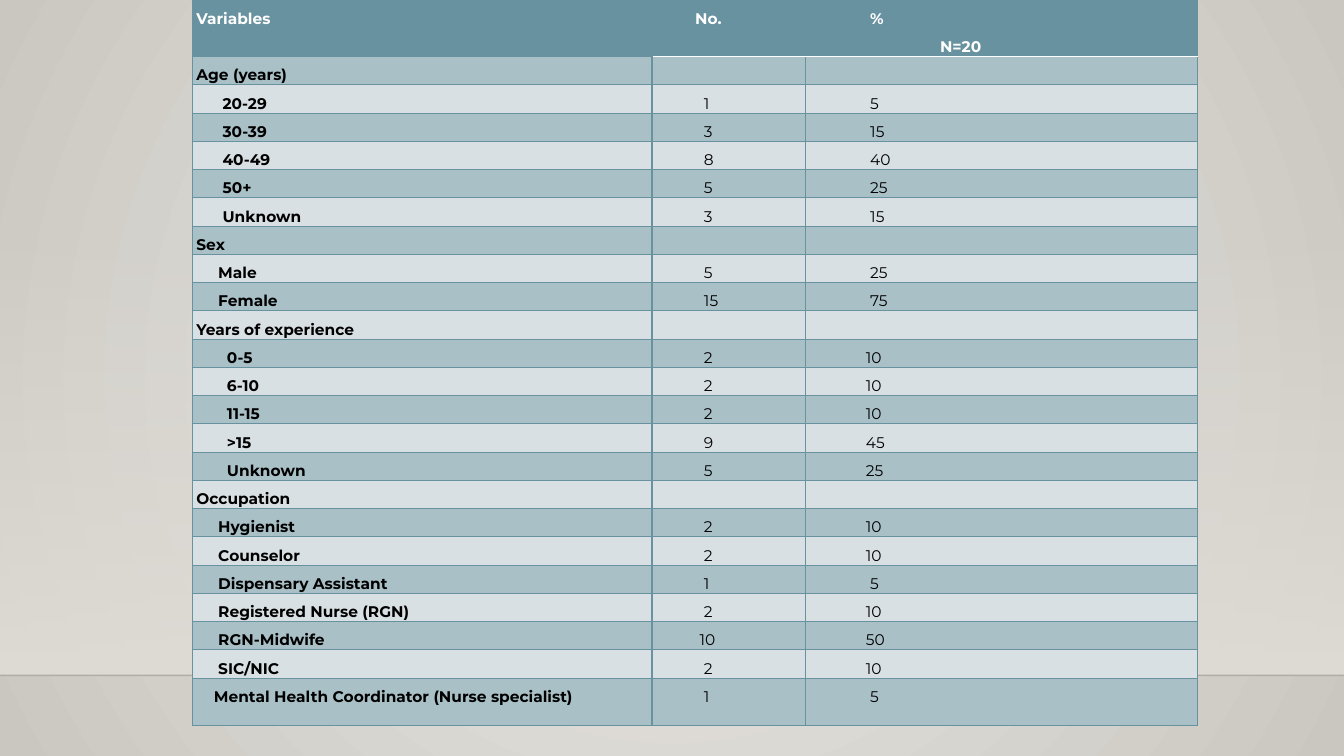
from dataclasses import dataclass

from pptx import Presentation
from pptx.dml.color import RGBColor
from pptx.enum.shapes import MSO_CONNECTOR, MSO_SHAPE
from pptx.enum.text import PP_ALIGN
from pptx.oxml.ns import qn
from pptx.util import Cm, Pt
from lxml import etree

JUSTIFY = PP_ALIGN.JUSTIFY
RECTANGLE = MSO_SHAPE.RECTANGLE
STRAIGHT = MSO_CONNECTOR.STRAIGHT

# Content: each header cell holds (text, indent step) lines
HEADERS = [[("Variables", 0)], [("No.", 9)], [("%", 14), ("N=20", 30)]]

# Section: title, label indent, whether the digits align on the right, rows
SECTIONS = [
    ("Age (years)", 6, False, [
        ("20-29", 1, 5), ("30-39", 3, 15), ("40-49", 8, 40),
        ("50+", 5, 25), ("Unknown", 3, 15)]),
    ("Sex", 5, False, [("Male", 5, 25), ("Female", 15, 75)]),
    ("Years of experience", 7, True, [
        ("0-5", 2, 10), ("6-10", 2, 10), ("11-15", 2, 10),
        (">15", 9, 45), ("Unknown", 5, 25)]),
    ("Occupation", 5, True, [
        ("Hygienist", 2, 10), ("Counselor", 2, 10),
        ("Dispensary Assistant", 1, 5), ("Registered Nurse (RGN)", 2, 10),
        ("RGN-Midwife", 10, 50), ("SIC/NIC", 2, 10),
        ("Mental Health Coordinator (Nurse specialist)", 4, 1, 5)]),
]


@dataclass(frozen=True)
class Theme:
    font: str = "Montserrat"
    size: float = 11
    teal: str = "6892A0"
    dark_band: str = "A9C0C7"
    light_band: str = "D9E0E3"
    white: str = "FFFFFF"
    black: str = "000000"
    glow: str = "ECEAE7"
    edge: str = "CAC7C1"
    wall: str = "DFDBD5"
    floor_line: str = "000001"
    thin: float = 0.75
    thick: float = 1.25


THEME = Theme()
SLIDE_W, SLIDE_H = 33.87, 19.05
TABLE_LEFT = 4.85
COLUMN_WIDTHS = [11.58, 3.86, 9.88]
HEADER_H, ROW_H, LAST_H = 1.42, 0.71, 1.19
INDENT_STEP = 0.11
WALL_TOP, FLOOR_Y = 5.61, 17.02
MARGINS = {"margin_left": Cm(0.1), "margin_right": Cm(0.1),
           "margin_top": 0, "margin_bottom": 0}
PARAGRAPH = {"alignment": JUSTIFY, "line_spacing": 1.5}


def set_all(target, values):
    for name, value in values.items():
        setattr(target, name, value)


def rgb(color):
    return RGBColor.from_string(color)


def set_alpha(color_element, percent):
    etree.SubElement(color_element, qn("a:alpha"), val=str(percent * 1000))


def fill_gradient(fill, first, last):
    fill.gradient()
    for stop, position, color in zip(fill.gradient_stops, (0, 1), (first, last)):
        stop.position = position
        stop.color.rgb = rgb(color)


def add_border(cell, side, color, width):
    border = etree.SubElement(cell._tc.get_or_add_tcPr(), qn(f"a:ln{side}"),
                              w=str(Pt(width)))
    solid = etree.SubElement(border, qn("a:solidFill"))
    etree.SubElement(solid, qn("a:srgbClr"), val=color)


def write_cell(cell, lines, color, bold):
    set_all(cell, MARGINS)
    for index, (text, steps) in enumerate(lines):
        frame = cell.text_frame
        paragraph = frame.add_paragraph() if index else frame.paragraphs[0]
        set_all(paragraph, PARAGRAPH)
        if not text:
            etree.SubElement(paragraph._p, qn("a:endParaRPr"),
                             sz=str(int(THEME.size * 100)))
            continue
        properties = paragraph._p.get_or_add_pPr()
        properties.set("marL", str(Cm(steps * INDENT_STEP)))
        properties.set("indent", "0")
        run = paragraph.add_run()
        run.text = text
        set_all(run.font, {"name": THEME.font, "size": Pt(THEME.size), "bold": bold})
        run.font.color.rgb = rgb(color)


def body_rows():
    for title, label_indent, align_digits, entries in SECTIONS:
        yield [(title, 0), ("", 0), ("", 0)]
        for label, *own_indent, number, percent in entries:
            row = [(label, own_indent[0] if own_indent else label_indent)]
            for value, steps in ((number, 11), (percent, 14)):
                digits = str(value)
                shift = len(digits) - 1 if align_digits else 0
                row.append((digits, steps - shift))
            yield row


def add_backdrop(slide):
    # Round glow behind everything
    fill_gradient(slide.background.fill, THEME.glow, THEME.edge)
    glow = slide.element.find(".//" + qn("a:gradFill"))
    glow.remove(glow.find(qn("a:lin")))
    circle = etree.SubElement(glow, qn("a:path"), path="circle")
    etree.SubElement(circle, qn("a:fillToRect"),
                     l="50000", t="50000", r="50000", b="50000")

    # Wall fading in towards the floor
    wall = slide.shapes.add_shape(RECTANGLE, 0, Cm(WALL_TOP), Cm(SLIDE_W),
                                  Cm(FLOOR_Y - WALL_TOP))
    wall.shadow.inherit = False
    wall.line.fill.background()
    fill_gradient(wall.fill, THEME.wall, THEME.wall)
    wall.fill.gradient_angle = 270
    set_alpha(wall.element.find(".//" + qn("a:srgbClr")), 0)

    # Floor line
    floor = slide.shapes.add_connector(STRAIGHT, 0, Cm(FLOOR_Y), Cm(SLIDE_W),
                                       Cm(FLOOR_Y))
    floor.line.width = Pt(1)
    floor.line.color.rgb = rgb(THEME.floor_line)
    set_alpha(floor.element.find(".//" + qn("a:srgbClr")), 20)
    etree.SubElement(floor.element.spPr, qn("a:effectLst"))


def add_variables_table(slide):
    body = list(body_rows())
    heights = [HEADER_H] + [ROW_H] * (len(body) - 1) + [LAST_H]
    table = slide.shapes.add_table(
        len(heights), len(COLUMN_WIDTHS), Cm(TABLE_LEFT), 0,
        Cm(sum(COLUMN_WIDTHS)), Cm(sum(heights))).table
    set_all(table, {"first_row": False, "horz_banding": False})
    for column, width in zip(table.columns, COLUMN_WIDTHS):
        column.width = Cm(width)
    for row, height in zip(table.rows, heights):
        row.height = Cm(height)

    rows = [HEADERS] + [[[entry] for entry in row] for row in body]
    for r, row in enumerate(rows):
        is_header = r == 0
        band = THEME.dark_band if r % 2 else THEME.light_band
        for c, lines in enumerate(row):
            cell = table.cell(r, c)
            write_cell(cell, lines, THEME.white if is_header else THEME.black,
                       is_header or c == 0)
            borders = {side: (THEME.teal, THEME.thin) for side in "LRTB"}
            if not is_header and c < 2:
                borders["R" if c == 0 else "L"] = (THEME.teal, THEME.thick)
            if c > 0 and r < 2:
                borders["B" if is_header else "T"] = (THEME.white, THEME.thick)
            for side, (color, width) in borders.items():
                add_border(cell, side, color, width)
            cell.fill.solid()
            cell.fill.fore_color.rgb = rgb(THEME.teal if is_header else band)


def main():
    deck = Presentation()
    set_all(deck, {"slide_width": Cm(SLIDE_W), "slide_height": Cm(SLIDE_H)})
    slide = deck.slides.add_slide(deck.slide_layouts[6])
    add_backdrop(slide)
    add_variables_table(slide)
    deck.save("out.pptx")


if __name__ == "__main__":
    main()
